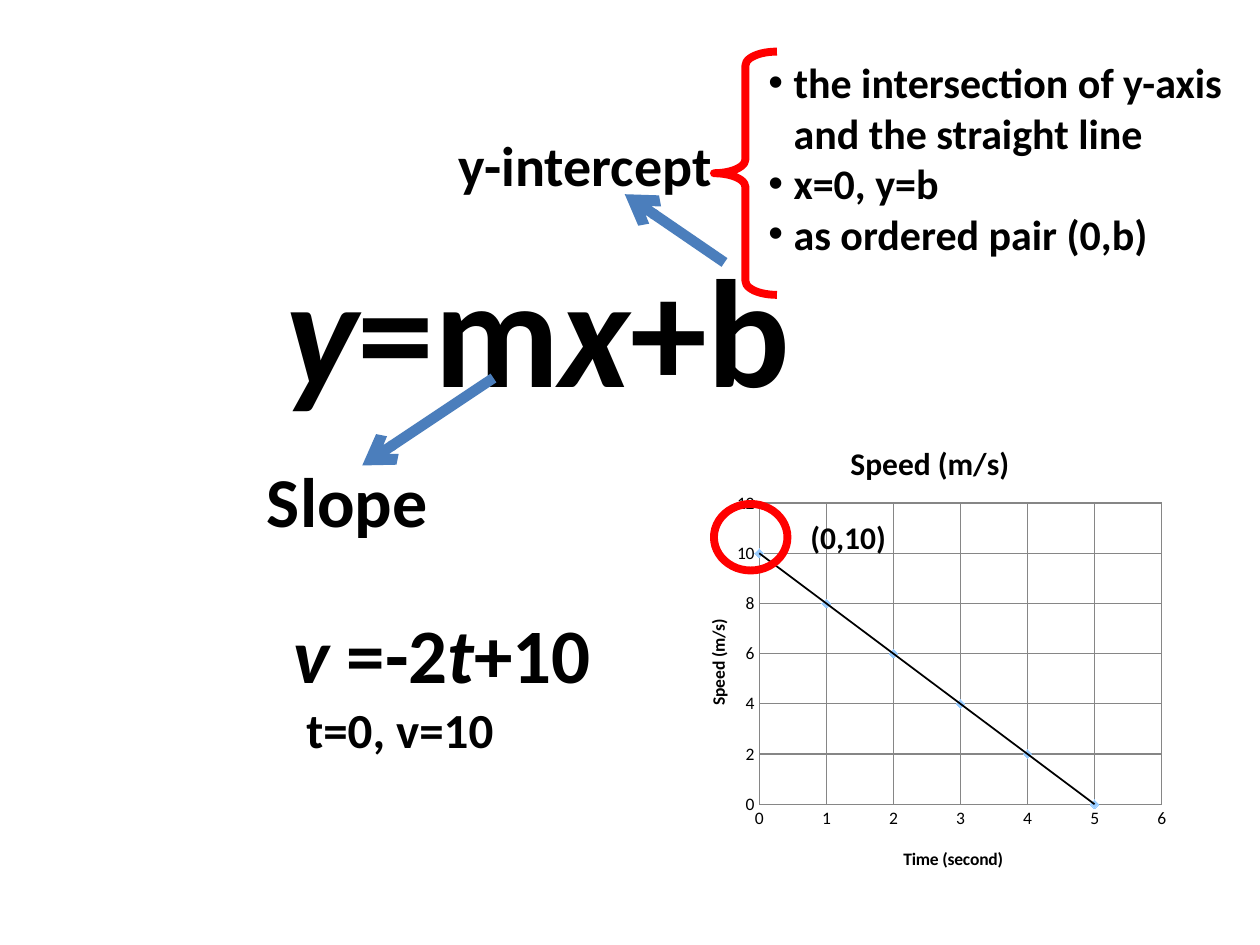
"""Build a slide explaining slope and y-intercept with a speed-time chart."""
from dataclasses import dataclass

from lxml import etree
from pptx import Presentation
from pptx import util as u
from pptx.chart.data import XyChartData
from pptx.dml.color import RGBColor
from pptx.enum import chart as charts, shapes, text
from pptx.oxml import ns, parse_xml


@dataclass(frozen=True)
class Theme:
    font: str = "Calibri"
    ink: str = "000000"
    arrow: str = "4B7EBC"
    accent: str = "FF0000"
    marker: str = "99CCFF"
    grid: str = "868686"
    formula: int = 88
    example: int = 44
    slope: int = 40
    label: int = 32
    values: int = 28
    bullets: int = 24
    caption: int = 18
    axis: int = 10


THEME = Theme()


def apply(target, values):
    for name, value in values.items():
        setattr(target, name, value)


def style_font(font, size, bold=True, italic=False):
    apply(font, {"name": THEME.font, "size": u.Pt(size), "bold": bold, "italic": italic})
    font.color.rgb = RGBColor.from_string(THEME.ink)


def style_line(line, color, width):
    line.color.rgb = RGBColor.from_string(color)
    line.width = u.Pt(width)


def add_text(page, place, paragraphs, size, wrap=True, hanging=False, bullet=False, top=3.6):
    box = page.shapes.add_textbox(*map(u.Pt, place))
    frame = box.text_frame
    apply(frame, {"word_wrap": wrap, "margin_top": u.Pt(top),
                  "vertical_anchor": text.MSO_ANCHOR.TOP})
    for index, spans in enumerate(paragraphs):
        para = frame.paragraphs[0] if index == 0 else frame.add_paragraph()
        if hanging:
            props = para._p.get_or_add_pPr()
            props.set("marL", str(u.Pt(14.4)))
            props.set("indent", str(-u.Pt(14.4)))
            if bullet:
                etree.SubElement(props, ns.qn("a:buFont")).set("typeface", "Arial")
                etree.SubElement(props, ns.qn("a:buChar")).set("char", "•")
        for words, italic in spans:
            span = para.add_run()
            span.text = words
            style_font(span.font, size, italic=italic)


def add_arrow(page, start, end):
    arrow = page.shapes.add_connector(
        shapes.MSO_CONNECTOR.STRAIGHT, *map(u.Pt, start + end))
    style_line(arrow.line, THEME.arrow, 6)
    etree.SubElement(arrow.line._get_or_add_ln(), ns.qn("a:tailEnd")).set("type", "arrow")
    etree.SubElement(arrow._element.spPr, ns.qn("a:effectLst"))


def add_outline(page, kind, place, adjustments=()):
    shape = page.shapes.add_shape(kind, *map(u.Pt, place))
    for index, value in enumerate(adjustments):
        shape.adjustments[index] = value
    shape.shadow.inherit = False
    shape.fill.background()
    style_line(shape.line, THEME.accent, 4.5)


def set_layout(element, position, inner=False):
    for old in element.findall(ns.qn("c:layout")):
        element.remove(old)
    layout = etree.Element(ns.qn("c:layout"))
    manual = etree.SubElement(layout, ns.qn("c:manualLayout"))
    settings = [("layoutTarget", "inner")] if inner else []
    settings += [("xMode", "edge"), ("yMode", "edge"), *zip("xywh", position)]
    for name, value in settings:
        etree.SubElement(manual, ns.qn(f"c:{name}")).set("val", str(value))
    element.insert(0 if inner else 1, layout)


def set_title(title, words, size, position):
    frame = title.text_frame
    frame.text = words
    style_font(frame.paragraphs[0].runs[0].font, size)
    set_layout(title._element, position)


def style_axis(axis, words, maximum, step, position):
    apply(axis, {"minimum_scale": 0, "maximum_scale": maximum, "major_unit": step,
                 "has_major_gridlines": True, "has_title": True,
                 "major_tick_mark": charts.XL_TICK_MARK.NONE,
                 "minor_tick_mark": charts.XL_TICK_MARK.NONE})
    style_line(axis.major_gridlines.format.line, THEME.grid, 0.75)
    style_line(axis.format.line, THEME.grid, 0.75)
    style_font(axis.tick_labels.font, THEME.axis, bold=False)
    set_title(axis.axis_title, words, THEME.axis, position)


def add_trend(series):
    trend = parse_xml(
        f'<c:trendline {ns.nsdecls("c", "a")}><c:spPr><a:ln w="{u.Pt(1)}"><a:solidFill>'
        f'<a:srgbClr val="{THEME.ink}"/></a:solidFill></a:ln></c:spPr>'
        '<c:trendlineType val="linear"/><c:dispRSqr val="0"/><c:dispEq val="0"/></c:trendline>')
    series._element.find(ns.qn("c:xVal")).addprevious(trend)


def add_speed_chart(page, place):
    data = XyChartData()
    points = data.add_series("Series 1")
    for second in range(6):
        points.add_data_point(second, 10 - 2 * second)
    chart = page.shapes.add_chart(
        charts.XL_CHART_TYPE.XY_SCATTER, *map(u.Pt, place), data).chart
    apply(chart, {"has_legend": False, "has_title": True})
    style_font(chart.font, THEME.axis, bold=False)
    chart.plots[0].vary_by_categories = False
    set_title(chart.chart_title, "Speed (m/s)", THEME.caption, (0.34, 0.055))
    style_axis(chart.category_axis, "Time (second)", 6, 1, (0.45, 0.905))
    style_axis(chart.value_axis, "Speed (m/s)", 12, 2, (0.06, 0.43))
    plot_area = chart._chartSpace.find(".//" + ns.qn("c:plotArea"))
    set_layout(plot_area, (0.17, 0.195, 0.8, 0.627), inner=True)
    series = chart.plots[0].series[0]
    series.smooth = False
    series.format.line.fill.background()
    apply(series.marker, {"style": charts.XL_MARKER_STYLE.DIAMOND, "size": 5})
    series.marker.format.fill.solid()
    series.marker.format.fill.fore_color.rgb = RGBColor.from_string(THEME.marker)
    style_line(series.marker.format.line, THEME.marker, 0.75)
    add_trend(series)


def main():
    deck = Presentation()
    apply(deck, {"slide_width": u.Pt(720), "slide_height": u.Pt(540)})
    page = deck.slides.add_slide(deck.slide_layouts[6])
    add_text(page, (156, 126, 366, 108),
             [[("y", True), ("=m", False), ("x", True), ("+b", False)]], THEME.formula, top=7.2)
    add_arrow(page, (282, 216), (207, 266))
    add_arrow(page, (414, 150), (357, 111))
    add_text(page, (255, 71, 183, 46), [[("y-intercept", False)]], THEME.label)
    add_outline(page, shapes.MSO_SHAPE.LEFT_BRACE, (408, 29.5, 36, 139), (0.22, 0.5))
    facts = ("the intersection of y-axis and the straight line", "x=0, y=b",
             "as ordered pair (0,b)")
    add_text(page, (432, 29, 279.5, 151), [[(fact, False)] for fact in facts],
             THEME.bullets, hanging=True, bullet=True)
    add_text(page, (145.5, 258, 113, 55.5), [[("Slope", False)]], THEME.slope)
    add_speed_chart(page, (385, 234, 287.5, 274.5))
    add_text(page, (160.5, 343, 186, 60.5),
             [[("v ", True), ("=-2", False), ("t", True), ("+10", False)]],
             THEME.example, wrap=False)
    add_outline(page, shapes.MSO_SHAPE.OVAL, (408, 288, 42, 38))
    add_text(page, (456, 292.5, 58.5, 29), [[("(0,10)", False)]],
             THEME.caption, wrap=False, hanging=True)
    add_text(page, (168, 396, 123, 41), [[("t=0, v=10", False)]],
             THEME.values, wrap=False, hanging=True)
    deck.save("out.pptx")


if __name__ == "__main__":
    main()
